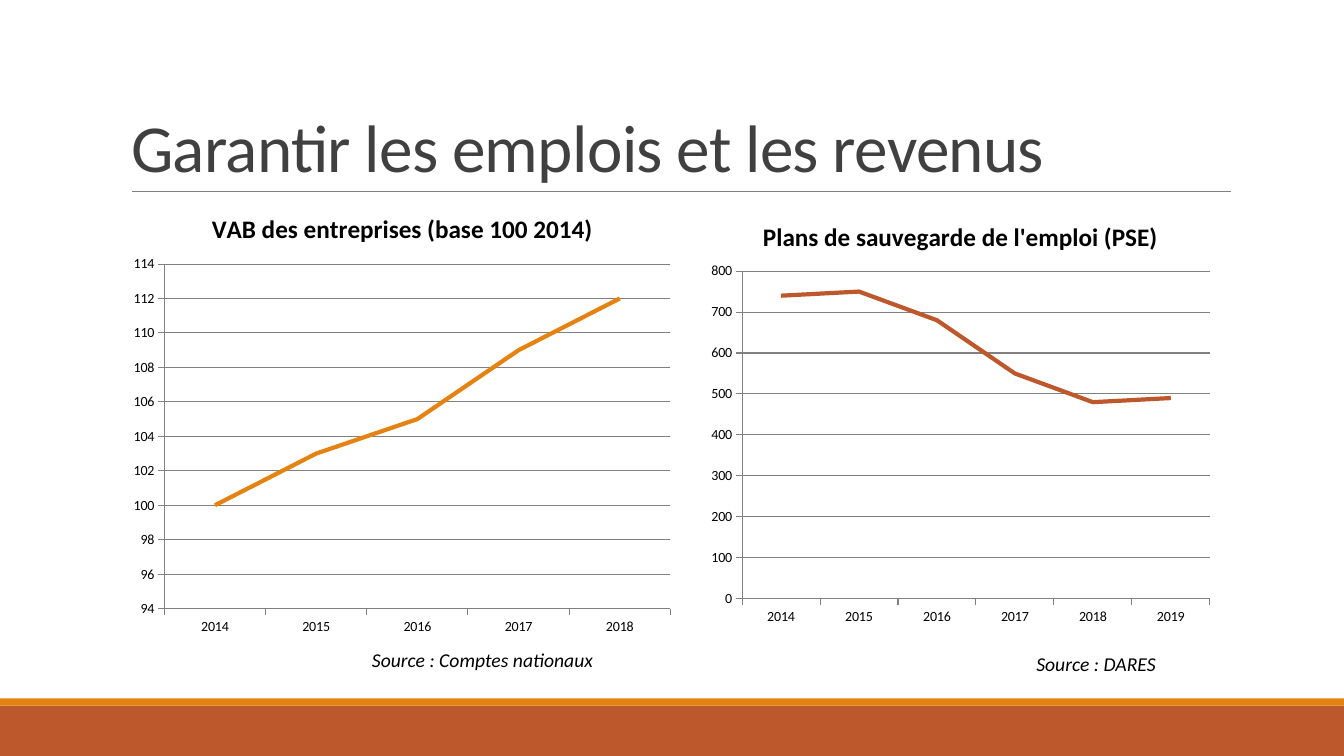
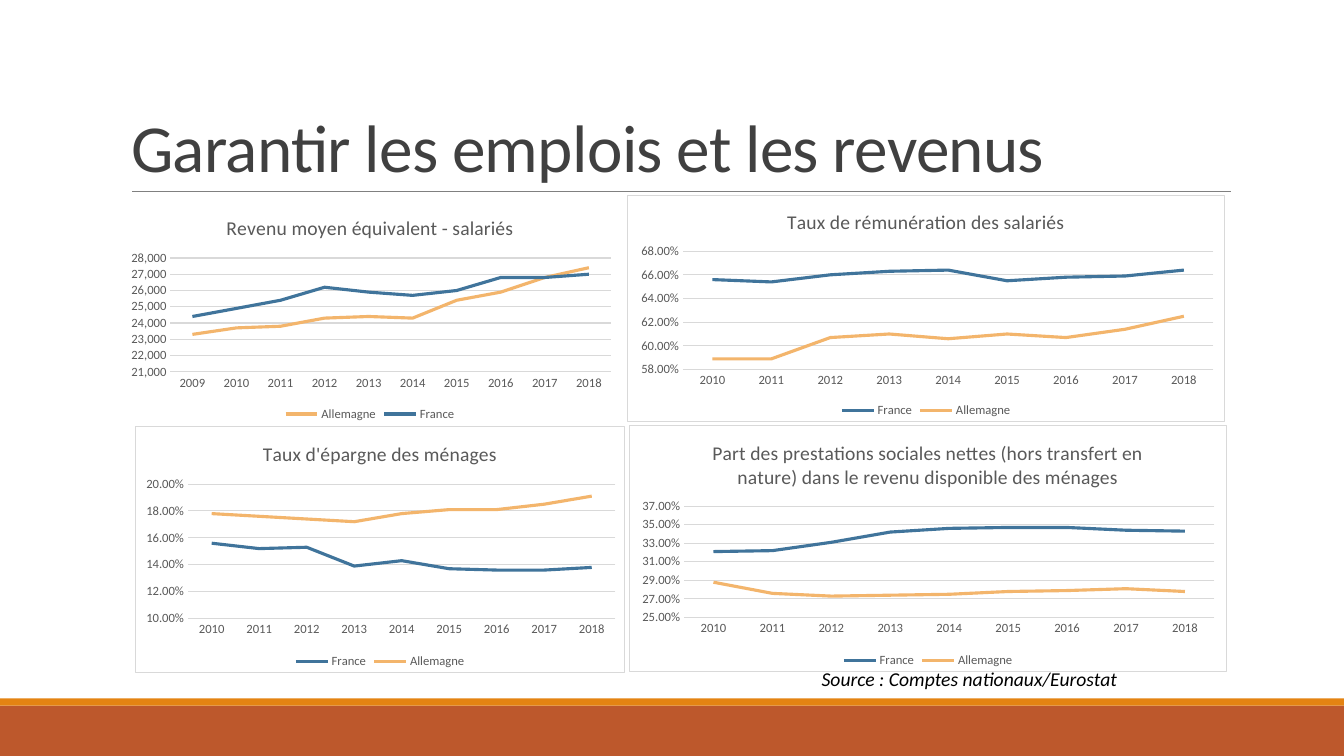
"""Build two slides of line charts on jobs and household income."""
from dataclasses import dataclass

from lxml import etree
from pptx import Presentation
from pptx.chart.data import CategoryChartData
from pptx.dml.color import RGBColor
from pptx.enum.chart import XL_CHART_TYPE as CHART, XL_LEGEND_POSITION as LEGEND, XL_TICK_MARK as TICK
from pptx.enum.shapes import MSO_CONNECTOR as CONNECTOR, MSO_SHAPE as SHAPE
from pptx.enum.text import MSO_ANCHOR as ANCHOR, PP_ALIGN as ALIGN
from pptx.oxml import parse_xml
from pptx.oxml.ns import nsdecls, qn
from pptx.util import Inches, Pt

FONT = "Calibri"
TITLE = "Garantir les emplois et les revenus"
BLACK = RGBColor(0x00, 0x00, 0x00)
DARK = RGBColor(0x40, 0x40, 0x40)
TEXT_GREY = RGBColor(0x59, 0x59, 0x59)
RULE_GREY = RGBColor(0x80, 0x80, 0x80)
PALE_GREY = RGBColor(0xD9, 0xD9, 0xD9)
RUST = RGBColor(0xBD, 0x58, 0x2C)
ORANGE = RGBColor(0xE4, 0x83, 0x12)
SAND = RGBColor(0xF3, 0xB5, 0x6C)
BLUE = RGBColor(0x40, 0x74, 0x9B)
COUNTRY_COLORS = {"France": BLUE, "Allemagne": SAND}
PERCENT = "0.00%"


@dataclass(frozen=True)
class ChartStyle:
    """Look shared by the charts of one slide."""
    title_size: int
    title_bold: bool
    text_size: int
    text_color: RGBColor
    rule_color: RGBColor
    line_width: float
    ticks: bool
    legend: bool


PLAIN = ChartStyle(18, True, 10, BLACK, RULE_GREY, 3, True, False)
COMPARISON = ChartStyle(14, False, 9, TEXT_GREY, PALE_GREY, 2.25, False, True)


def format_font(font, size, color, bold=False, italic=False):
    """Set every property of a font."""
    font.name, font.size = FONT, Pt(size)
    font.bold, font.italic = bold, italic
    font.color.rgb = color


def add_band(slide, top, height, color):
    """Add a full-width band."""
    sp = slide.shapes.add_shape(SHAPE.RECTANGLE, 0, Inches(top), Inches(13.33), Inches(height))
    sp.shadow.inherit = False
    sp.fill.solid()
    sp.fill.fore_color.rgb = color
    sp.line.fill.background()
    return sp


def add_rule(slide):
    """Add the thin line under the title."""
    y = Inches(1.9)
    rule = slide.shapes.add_connector(CONNECTOR.STRAIGHT, Inches(1.31), y, Inches(12.21), y)
    rule.line.color.rgb = RULE_GREY
    rule.line.width = Pt(0.5)
    etree.SubElement(rule._element.spPr, qn("a:effectLst"))
    return rule


def decorate_layout(slide):
    """Put the bands and the title rule on the layout of the slide."""
    parts = [add_band(slide, 7, 0.5, RUST), add_band(slide, 6.93, 0.07, ORANGE), add_rule(slide)]
    for part in parts:
        slide.slide_layout.shapes._spTree.append(part._element)


def add_title(slide, text):
    """Place and format the title placeholder."""
    sp = slide.shapes.title
    sp.left, sp.top, sp.width, sp.height = map(Inches, (1.2, 0.31, 11, 1.59))
    tf = sp.text_frame
    tf.text = text
    tf.vertical_anchor = ANCHOR.BOTTOM
    p = tf.paragraphs[0]
    p.alignment, p.line_spacing = ALIGN.LEFT, 0.85
    r = p.runs[0]
    format_font(r.font, 48, DARK)
    r.font._element.set("spc", "-50")


def add_source(slide, text, left, top, width):
    """Add an italic source line."""
    box = slide.shapes.add_textbox(Inches(left), Inches(top), Inches(width), Inches(0.34))
    tf = box.text_frame
    tf.word_wrap = True
    tf.text = text
    format_font(tf.paragraphs[0].runs[0].font, 14, BLACK, italic=True)


def set_plot_area(chart, box, plot):
    """Fix the inner plot area, given in slide inches like the chart box."""
    left, top, width, height = box
    shares = {"x": (plot[0] - left) / width, "y": (plot[1] - top) / height,
              "w": plot[2] / width, "h": plot[3] / height}
    values = "".join(f'<c:{key} val="{share:.4f}"/>' for key, share in shares.items())
    area = chart._chartSpace.chart.plotArea
    for old in area.findall(qn("c:layout")):
        area.remove(old)
    area.insert(0, parse_xml(
        f'<c:layout {nsdecls("c")}><c:manualLayout><c:layoutTarget val="inner"/>'
        f'<c:xMode val="edge"/><c:yMode val="edge"/>{values}</c:manualLayout></c:layout>'))


def set_frame(chart, framed):
    """Give the chart a white ground and pale border, or neither."""
    fill, line = "<a:noFill/>", "<a:ln><a:noFill/></a:ln>"
    if framed:
        fill = '<a:solidFill><a:srgbClr val="FFFFFF"/></a:solidFill>'
        line = f'<a:ln w="9525"><a:solidFill><a:srgbClr val="{PALE_GREY}"/></a:solidFill></a:ln>'
    chart._chartSpace.chart.addnext(parse_xml(f'<c:spPr {nsdecls("c", "a")}>{fill}{line}</c:spPr>'))


def format_axes(chart, style, scale, number_format):
    """Format both axes and the gridlines."""
    cat, val = chart.category_axis, chart.value_axis
    for axis in (cat, val):
        axis.major_tick_mark = TICK.OUTSIDE if style.ticks else TICK.NONE
        axis.minor_tick_mark = TICK.NONE
        axis.format.line.color.rgb = style.rule_color
        axis.format.line.width = Pt(0.75)
        format_font(axis.tick_labels.font, style.text_size, style.text_color)
    if not style.ticks:
        val.format.line.fill.background()
    val.minimum_scale, val.maximum_scale, val.major_unit = scale
    val.tick_labels.number_format = number_format
    val.tick_labels.number_format_is_linked = False
    val.has_major_gridlines = True
    val.major_gridlines.format.line.color.rgb = style.rule_color
    val.major_gridlines.format.line.width = Pt(0.75)


def add_line_chart(slide, style, title, box, plot, first_year, series, scale,
                   number_format="0", colors=COUNTRY_COLORS, framed=False):
    """Add a titled line chart with one value per year."""
    data = CategoryChartData(number_format=number_format)
    count = len(next(iter(series.values())))
    data.categories = [str(first_year + i) for i in range(count)]
    for name, values in series.items():
        data.add_series(name, values)
    chart = slide.shapes.add_chart(CHART.LINE, *map(Inches, box), data).chart
    format_font(chart.font, 10, BLACK)
    chart.has_title = True
    tf = chart.chart_title.text_frame
    tf.text = title
    format_font(tf.paragraphs[0].runs[0].font, style.title_size, style.text_color, style.title_bold)
    chart.chart_title.include_in_layout = False
    chart.has_legend = style.legend
    if style.legend:
        chart.legend.position = LEGEND.BOTTOM
        chart.legend.include_in_layout = False
        format_font(chart.legend.font, style.text_size, style.text_color)
    for line in chart.plots[0].series:
        line.smooth = False
        line.format.line.color.rgb = colors[line.name]
        line.format.line.width = Pt(style.line_width)
    format_axes(chart, style, scale, number_format)
    set_plot_area(chart, box, plot)
    set_frame(chart, framed)


def build_jobs_slide(slide):
    """Fill the slide on value added and job protection plans."""
    add_line_chart(slide, PLAIN, "Plans de sauvegarde de l'emploi (PSE)",
                   (6.95, 1.99, 5.15, 4.29), (7.36, 2.69, 4.64, 3.25), 2014,
                   {"PSE": (740, 750, 680, 550, 480, 490)},
                   (0, 800, 100), colors={"PSE": RUST})
    add_line_chart(slide, PLAIN, "VAB des entreprises (base 100 2014)",
                   (1.22, 1.91, 5.54, 4.48), (1.63, 2.62, 5.02, 3.42), 2014,
                   {"VAB": (100, 103, 105, 109, 112)},
                   (94, 114, 2), colors={"VAB": ORANGE})
    add_source(slide, "Source : Comptes nationaux", 3.59, 6.38, 3.05)
    add_source(slide, "Source : DARES", 10.18, 6.42, 1.76)


def build_income_slide(slide):
    """Fill the slide comparing household income in two countries."""
    add_line_chart(slide, COMPARISON, "Revenu moyen équivalent - salariés",
                   (1.19, 1.99, 4.96, 2.23), (1.69, 2.56, 4.37, 1.13), 2009,
                   {"Allemagne": (23300, 23700, 23800, 24300, 24400, 24300, 25400, 25900, 26800, 27400),
                    "France": (24400, 24900, 25400, 26200, 25900, 25700, 26000, 26800, 26800, 27000)},
                   (21000, 28000, 1000), "#,##0")
    rates = (
        ("Taux d'épargne des ménages",
         (1.34, 4.23, 4.86, 2.45), (1.86, 4.8, 4.25, 1.34), (0.1, 0.2, 0.02),
         (0.156, 0.152, 0.153, 0.139, 0.143, 0.137, 0.136, 0.136, 0.138),
         (0.178, 0.176, 0.174, 0.172, 0.178, 0.181, 0.181, 0.185, 0.191)),
        ("Taux de rémunération des salariés",
         (6.22, 1.93, 5.93, 2.26), (6.77, 2.49, 5.27, 1.18), (0.58, 0.68, 0.02),
         (0.656, 0.654, 0.66, 0.663, 0.664, 0.655, 0.658, 0.659, 0.664),
         (0.589, 0.589, 0.607, 0.61, 0.606, 0.61, 0.607, 0.614, 0.625)),
        ("Part des prestations sociales nettes (hors transfert en nature) "
         "dans le revenu disponible des ménages",
         (6.24, 4.22, 5.93, 2.45), (6.78, 5.02, 5.27, 1.11), (0.25, 0.37, 0.02),
         (0.321, 0.322, 0.331, 0.342, 0.346, 0.347, 0.347, 0.344, 0.343),
         (0.288, 0.276, 0.273, 0.274, 0.275, 0.278, 0.279, 0.281, 0.278)),
    )
    for title, box, plot, scale, france, germany in rates:
        add_line_chart(slide, COMPARISON, title, box, plot, 2010,
                       {"France": france, "Allemagne": germany}, scale, PERCENT, framed=True)
    add_source(slide, "Source : Comptes nationaux/Eurostat", 8.05, 6.57, 4.08)


def main():
    """Build and save the presentation."""
    prs = Presentation()
    prs.slide_width, prs.slide_height = Inches(13.33), Inches(7.5)
    layout = prs.slide_layouts[5]
    slides = [prs.slides.add_slide(layout) for _ in range(2)]
    decorate_layout(slides[0])
    for slide, build in zip(slides, (build_jobs_slide, build_income_slide)):
        add_title(slide, TITLE)
        build(slide)
    prs.save("out.pptx")


if __name__ == "__main__":
    main()
